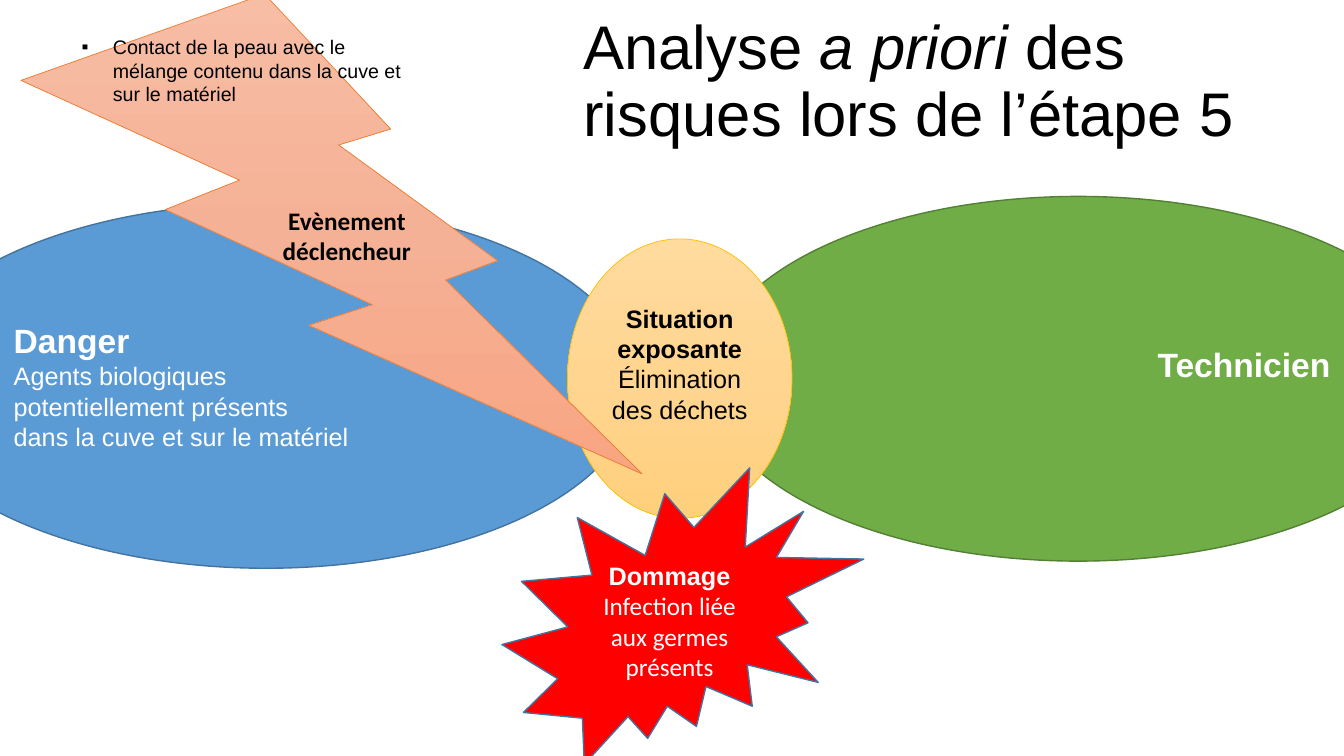
from copy import deepcopy
from dataclasses import dataclass

from lxml.etree import SubElement
from pptx import Presentation
from pptx.dml.color import RGBColor
from pptx.enum.shapes import MSO_SHAPE
from pptx.enum.text import MSO_ANCHOR, MSO_AUTO_SIZE, PP_ALIGN
from pptx.oxml.ns import qn
from pptx.util import Cm, Pt


@dataclass(frozen=True)
class Theme:
    font: str = "Arial"
    accent_font: str = "Calibri"
    title_size: int = 44
    heading_size: int = 24
    text_size: int = 18
    list_size: int = 14
    dark: str = "000000"
    light: str = "FFFFFF"
    danger: str = "5B9BD5"
    danger_line: str = "43739E"
    technician: str = "70AD47"
    technician_line: str = "538035"
    exposure: tuple = ("FFDB9E", "FFD590", "FFD07C")
    exposure_line: str = "FFC000"
    trigger: tuple = ("F7BDA5", "F5B196", "F8A582")
    trigger_line: str = "ED7D31"
    damage: str = "FF0000"


class RiskSlide:
    def __init__(self, presentation, theme):
        self.theme = theme
        self.slide = presentation.slides.add_slide(presentation.slide_layouts[1])

    def place(self, shape, box):
        shape.left, shape.top, shape.width, shape.height = (Cm(length) for length in box)

    def style_run(self, run, size, color, bold=False, italic=False, font=None):
        run.font.name = font or self.theme.font
        run.font.size = Pt(size)
        run.font.bold = bold
        run.font.italic = italic
        run.font.color.rgb = RGBColor.from_string(color)

    def title(self, box, parts):
        """Write the title from (text, italic) parts."""
        title = self.slide.shapes.title
        self.place(title, box)
        frame = title.text_frame
        frame.auto_size = MSO_AUTO_SIZE.NONE
        frame.vertical_anchor = MSO_ANCHOR.MIDDLE
        paragraph = frame.paragraphs[0]
        paragraph.alignment = PP_ALIGN.LEFT
        paragraph.line_spacing = 0.9
        for text, italic in parts:
            run = paragraph.add_run()
            run.text = text
            self.style_run(run, self.theme.title_size, self.theme.dark, italic=italic)

    def bullet(self, box, text):
        """Write the body placeholder as a bullet, in front of the shapes drawn so far."""
        body = self.slide.placeholders[1]
        self.place(body, box)
        body.element.getparent().append(body.element)
        frame = body.text_frame
        frame.auto_size = MSO_AUTO_SIZE.NONE
        frame.vertical_anchor = MSO_ANCHOR.TOP
        frame.text = text
        paragraph = frame.paragraphs[0]
        paragraph.space_before = Pt(0)
        self.style_run(paragraph.runs[0], self.theme.list_size, self.theme.dark)
        properties = paragraph._p.get_or_add_pPr()
        properties.set("marL", str(Cm(2.06)))
        properties.set("indent", str(Cm(-0.79)))
        SubElement(properties, qn("a:buFont"), typeface=self.theme.font)
        SubElement(properties, qn("a:buChar"), char="▪")

    def fill(self, shape, colors):
        """Fill with one colour, or with a downward gradient of three."""
        if isinstance(colors, str):
            shape.fill.solid()
            shape.fill.fore_color.rgb = RGBColor.from_string(colors)
            return
        shape.fill.gradient()
        shape.fill.gradient_angle = 270
        first_stop = shape.fill._fill._gradFill.find(qn("a:gsLst"))[0]
        first_stop.addnext(deepcopy(first_stop))
        for stop, position, color in zip(shape.fill.gradient_stops, (0, 0.5, 1), colors):
            stop.position = position
            stop.color.rgb = RGBColor.from_string(color)

    def shape(self, kind, box, colors, line, lines, line_width=1, text_color=None,
              alignment=PP_ALIGN.CENTER, raise_text=0.0):
        """Draw a shape; lines holds (text, size, bold, font) for each paragraph."""
        shape = self.slide.shapes.add_shape(kind, *(Cm(length) for length in box))
        shape.shadow.inherit = False
        self.fill(shape, colors)
        shape.line.color.rgb = RGBColor.from_string(line)
        shape.line.width = Pt(line_width)
        frame = shape.text_frame
        frame.word_wrap = True
        frame.vertical_anchor = MSO_ANCHOR.MIDDLE
        frame.margin_bottom = Cm(0.13 + raise_text)
        frame.text = "\n".join(text for text, *_ in lines)
        for paragraph, (_, size, bold, font) in zip(frame.paragraphs, lines):
            paragraph.alignment = alignment
            self.style_run(paragraph.runs[0], size, text_color or self.theme.light,
                           bold, font=font)


def main():
    theme = Theme()
    presentation = Presentation()
    presentation.slide_width, presentation.slide_height = Cm(33.87), Cm(19.05)
    risk = RiskSlide(presentation, theme)
    heading, size = theme.heading_size, theme.text_size
    arial, calibri = theme.font, theme.accent_font
    blank_line = 0.74

    risk.title((14.45, 0.25, 18.69, 3.68),
               [("Analyse ", False), ("a priori ", True),
                ("des risques lors de l’étape 5", False)])
    risk.shape(MSO_SHAPE.OVAL, (-2.64, 5.13, 18.69, 9.19), theme.danger, theme.danger_line,
               [("Danger", heading, True, arial),
                ("Agents biologiques", size, False, arial),
                ("potentiellement présents", size, False, arial),
                ("dans la cuve et sur le matériel", size, False, arial)],
               alignment=PP_ALIGN.LEFT)
    risk.shape(MSO_SHAPE.OVAL, (17.83, 4.95, 18.69, 9.19),
               theme.technician, theme.technician_line,
               [("Technicien", heading, True, arial)],
               alignment=PP_ALIGN.RIGHT, raise_text=blank_line)
    risk.shape(MSO_SHAPE.OVAL, (14.3, 6.02, 5.66, 7.04), theme.exposure, theme.exposure_line,
               [("Situation exposante", size, True, arial),
                ("Élimination des déchets", size, False, arial)],
               line_width=0.5, text_color=theme.dark, raise_text=blank_line)
    risk.shape(MSO_SHAPE.LIGHTNING_BOLT, (0.53, -0.15, 15.65, 12.09),
               theme.trigger, theme.trigger_line,
               [("Evènement déclencheur", size, True, calibri)],
               line_width=0.5, text_color=theme.dark)
    risk.bullet((0.53, 0.76, 10.44, 2.06),
                "Contact de la peau avec le mélange contenu dans la cuve et sur le matériel")
    risk.shape(MSO_SHAPE.EXPLOSION2, (12.65, 11.79, 9.12, 7.47),
               theme.damage, theme.danger_line,
               [("Dommage", size, True, arial),
                ("Infection liée aux germes présents", size, False, calibri)])
    presentation.save("out.pptx")


if __name__ == "__main__":
    main()
